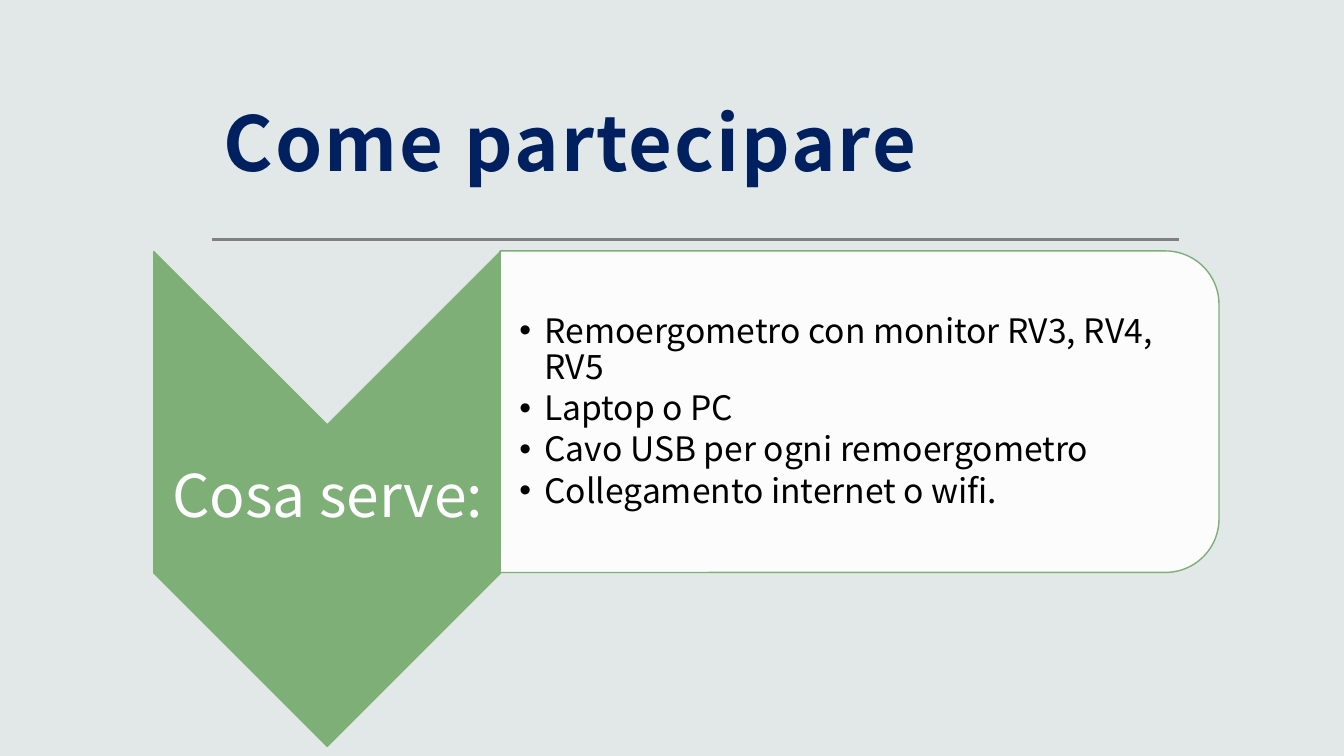
from typing import Any, NamedTuple

from lxml import etree
from pptx import Presentation
from pptx.dml.color import RGBColor
from pptx.enum.shapes import MSO_CONNECTOR, MSO_SHAPE
from pptx.enum.text import MSO_ANCHOR, MSO_AUTO_SIZE, PP_ALIGN
from pptx.oxml.ns import qn
from pptx.util import Inches, Pt

STRAIGHT = MSO_CONNECTOR.STRAIGHT
CHEVRON = MSO_SHAPE.CHEVRON
ROUND_TOP = MSO_SHAPE.ROUND_2_SAME_RECTANGLE
MIDDLE, BOTTOM = MSO_ANCHOR.MIDDLE, MSO_ANCHOR.BOTTOM
LEFT, CENTER = PP_ALIGN.LEFT, PP_ALIGN.CENTER
FIXED = MSO_AUTO_SIZE.NONE

WIDTH, HEIGHT = Inches(13.33), Inches(7.5)
COLUMN, ROW = WIDTH / 100, HEIGHT / 100
FONT = "Noto Sans CJK JP"
GREEN, WHITE, NAVY, BLACK = "7DAF77", "FFFFFF", "002060", "000000"
GRAY, BACKGROUND = "808080", "E2E8E7"


class Frame(NamedTuple):
    column: float
    row: float
    columns: float
    rows: float

    def lengths(self) -> list[int]:
        units = (COLUMN, ROW, COLUMN, ROW)
        return [round(share * unit) for share, unit in zip(self, units)]


class Block(NamedTuple):
    frame: Frame
    kind: Any
    opacity: int


class Writing(NamedTuple):
    frame: Frame
    lines: list[str]
    color: str
    margins: tuple[float, float, float, float]
    anchor: Any
    font: dict[str, Any]
    paragraph: dict[str, Any]
    indent: float = 0
    tracking: float = 0


BLOCKS = [
    Block(Frame(5.93, 43.07, 36.83, 45.87), CHEVRON, 100),
    Block(Frame(51.99, 6.93, 23.93, 95.07), ROUND_TOP, 90),
]
TITLE = Writing(
    Frame(15.75, 6.4, 71.94, 19.6), ["Come partecipare"], NAVY,
    (0.12, 0.12, 0.12, 0.1), BOTTOM,
    {"size": Pt(54), "bold": True},
    {"alignment": LEFT, "line_spacing": 1.3},
    tracking=1.5,
)
LABEL = Writing(
    Frame(11.48, 56.13, 25.81, 19.6), ["Cosa serve:"], WHITE,
    (0.03, 0.03, 0.03, 0.03), MIDDLE,
    {"size": Pt(42)},
    {"alignment": CENTER, "line_spacing": 0.9},
)
NEEDS = Writing(
    Frame(37.21, 35.33, 52.36, 38.4),
    [
        "Remoergometro con monitor RV3, RV4, RV5",
        "Laptop o PC",
        "Cavo USB per ogni remoergometro",
        "Collegamento internet o wifi.",
    ],
    BLACK, (0.19, 0.02, 0.02, 0.02), MIDDLE,
    {"size": Pt(24)},
    {"alignment": LEFT, "line_spacing": 0.9,
     "space_before": Pt(0), "space_after": Pt(3.6)},
    indent=0.25,
)


def color(value: str) -> RGBColor:
    return RGBColor.from_string(value)


def apply(target: Any, values: dict[str, Any]) -> None:
    for name, value in values.items():
        setattr(target, name, value)


def place(box: Any, frame: Frame) -> None:
    apply(box, dict(zip(("left", "top", "width", "height"), frame.lengths())))


def draw_block(page: Any, block: Block) -> None:
    shape = page.shapes.add_shape(block.kind, *block.frame.lengths())
    shape.rotation = 90
    shape.shadow.inherit = False
    shape.fill.solid()
    shape.fill.fore_color.rgb = color(GREEN if block.opacity == 100 else WHITE)
    if block.opacity < 100:
        tint = next(shape.element.iter(qn("a:srgbClr")))
        etree.SubElement(tint, qn("a:alpha"), val=str(block.opacity * 1000))
    shape.line.color.rgb = color(GREEN)
    shape.line.width = Pt(1)


def write(box: Any, writing: Writing) -> None:
    place(box, writing.frame)
    text = box.text_frame
    sides = ("margin_left", "margin_top", "margin_right", "margin_bottom")
    apply(text, dict(zip(sides, map(Inches, writing.margins))))
    apply(text, {"word_wrap": True, "auto_size": FIXED,
                 "vertical_anchor": writing.anchor})
    text.text = "\n".join(writing.lines)
    for para in text.paragraphs:
        if writing.indent:
            properties = para._p.get_or_add_pPr()
            properties.set("marL", str(Inches(writing.indent)))
            properties.set("indent", str(-Inches(writing.indent)))
            bullet = etree.SubElement(properties, qn("a:buChar"))
            bullet.set("char", "•")
        apply(para, writing.paragraph)
        for span in para.runs:
            apply(span.font, {"name": FONT, **writing.font})
            span.font.color.rgb = color(writing.color)
    if writing.tracking:
        for properties in box.element.iter(qn("a:rPr")):
            properties.set("spc", str(round(writing.tracking * 100)))


def draw_rule(page: Any, column: float, row: float, columns: float) -> None:
    left, top, width, _ = Frame(column, row, columns, 0).lengths()
    rule = page.shapes.add_connector(STRAIGHT, left, top, left + width, top)
    rule.line.color.rgb = color(GRAY)
    rule.line.width = Pt(2)
    etree.SubElement(rule.element.spPr, qn("a:effectLst"))


def main() -> None:
    deck = Presentation()
    apply(deck, {"slide_width": WIDTH, "slide_height": HEIGHT})
    page = deck.slides.add_slide(deck.slide_layouts[1])
    page.background.fill.solid()
    page.background.fill.fore_color.rgb = color(BACKGROUND)
    title, body = page.placeholders

    draw_rule(page, 15.75, 31.73, 71.94)
    write(title, TITLE)
    for block in BLOCKS:
        draw_block(page, block)
    write(page.shapes.add_textbox(*LABEL.frame.lengths()), LABEL)
    write(body, NEEDS)
    body.element.getparent().append(body.element)
    deck.save("out.pptx")


if __name__ == "__main__":
    main()
